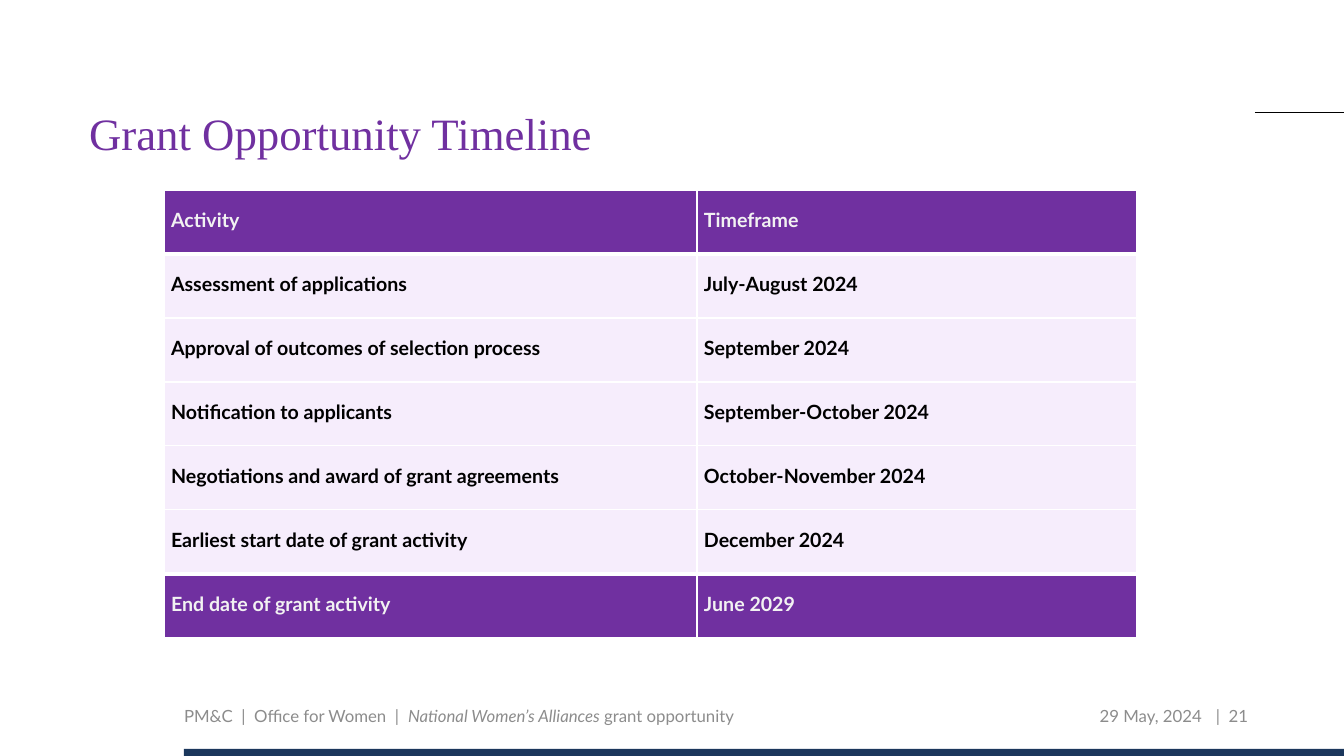
"""Build the grant opportunity timeline slide."""
from lxml import etree
from pptx import Presentation, util as u
from pptx.dml.color import RGBColor
from pptx.enum import shapes, text
from pptx.oxml.ns import qn

PURPLE = RGBColor(0x70, 0x30, 0xA0)
LILAC = RGBColor(0xEC, 0xD9, 0xF9)
NAVY = RGBColor(0x1B, 0x37, 0x5C)
GREY = RGBColor(0x8C, 0x8C, 0x8C)
PALE = RGBColor(0xF2, 0xF2, 0xF2)
BLACK = RGBColor(0, 0, 0)
WHITE = RGBColor(255, 255, 255)


def px(*lengths):
    return [u.Inches(n / 100.8) for n in lengths]


def add_run(p, words, size, color, name="Lato", bold=False, italic=False):
    r = p.add_run()
    r.text = words
    for key, value in dict(size=u.Pt(size), name=name, bold=bold, italic=italic).items():
        setattr(r.font, key, value)
    r.font.color.rgb = color


prs = Presentation()
prs.slide_width, prs.slide_height = px(1344, 756)
s = prs.slides.add_slide(prs.slide_layouts[6])

rule = s.shapes.add_connector(shapes.MSO_CONNECTOR.STRAIGHT, *px(1255, 112, 1344, 112))
rule.line.color.rgb = BLACK
rule.line.width = u.Pt(0.5)
etree.SubElement(rule.element.spPr, qn("a:effectLst"))

bar = s.shapes.add_shape(shapes.MSO_SHAPE.RECTANGLE, *px(184, 749, 1160, 7))
bar.shadow.inherit = False
bar.fill.solid()
bar.fill.fore_color.rgb = NAVY
bar.line.fill.background()

TOP, MIDDLE = text.MSO_ANCHOR.TOP, text.MSO_ANCHOR.MIDDLE
LEFT, RIGHT = text.PP_ALIGN.LEFT, text.PP_ALIGN.RIGHT
labels = [
    ((89, 112, 1167, 92), TOP, LEFT, 0.9, 32, PURPLE, "Times New Roman",
     [("Grant Opportunity Timeline", False)]),
    ((184, 703, 592, 25), MIDDLE, LEFT, 1.0, 12, GREY, "Lato",
     [("PM&C  |  Office for Women  |  ", False),
      ("National Women’s Alliances ", True),
      ("grant opportunity", False)]),
    ((1017, 703, 185, 25), MIDDLE, RIGHT, 1.0, 12, GREY, "Lato", [("29 May, 2024", False)]),
    ((1216, 703, 40, 25), MIDDLE, LEFT, 1.0, 12, GREY, "Lato", [("|  21", False)]),
]
for box, anchor, align, spacing, size, color, name, runs in labels:
    tf = s.shapes.add_textbox(*px(*box)).text_frame
    for key, value in dict(word_wrap=True, vertical_anchor=anchor, margin_left=0,
                           margin_top=0, margin_right=0, margin_bottom=0).items():
        setattr(tf, key, value)
    p = tf.paragraphs[0]
    p.alignment = align
    p.line_spacing = spacing
    for words, italic in runs:
        add_run(p, words, size, color, name, italic=italic)

timeline = [
    ("Activity", "Timeframe"),
    ("Assessment of applications", "July-August 2024"),
    ("Approval of outcomes of selection process", "September 2024"),
    ("Notification to applicants", "September-October 2024"),
    ("Negotiations and award of grant agreements", "October-November 2024"),
    ("Earliest start date of grant activity", "December 2024"),
    ("End date of grant activity", "June 2029"),
]
last = len(timeline) - 1
table = s.shapes.add_table(len(timeline), 2, *px(164, 190, 973, 448)).table
table.first_row = table.horz_banding = False
for column, width in zip(table.columns, px(533, 440)):
    column.width = width

for i, entries in enumerate(timeline):
    table.rows[i].height = px(64)[0]
    strong = i in (0, last)
    widths = {"L": 1, "R": 1, "T": 3 if i in (1, last) else 1, "B": 3 if i in (0, last - 1) else 1}
    for j, words in enumerate(entries):
        cell = table.cell(i, j)
        side = px(7)[0]
        for key, value in dict(vertical_anchor=MIDDLE, margin_left=side, margin_right=side,
                               margin_top=0, margin_bottom=0).items():
            setattr(cell, key, value)
        tcPr = cell._tc.get_or_add_tcPr()
        for edge, width in widths.items():
            ln = etree.SubElement(tcPr, qn(f"a:ln{edge}"), w=str(u.Pt(width)))
            fill = etree.SubElement(ln, qn("a:solidFill"))
            etree.SubElement(fill, qn("a:srgbClr"), val=str(WHITE))
        cell.fill.solid()
        cell.fill.fore_color.rgb = PURPLE if strong else LILAC
        if not strong:
            tint = tcPr.find(qn("a:solidFill")).find(qn("a:srgbClr"))
            etree.SubElement(tint, qn("a:alpha"), val="46000")
        p = cell.text_frame.paragraphs[0]
        for key, value in dict(line_spacing=u.Pt(14), space_before=u.Pt(3),
                               space_after=u.Pt(3)).items():
            setattr(p, key, value)
        add_run(p, words, 14, PALE if strong else BLACK, bold=True)

prs.save("out.pptx")
